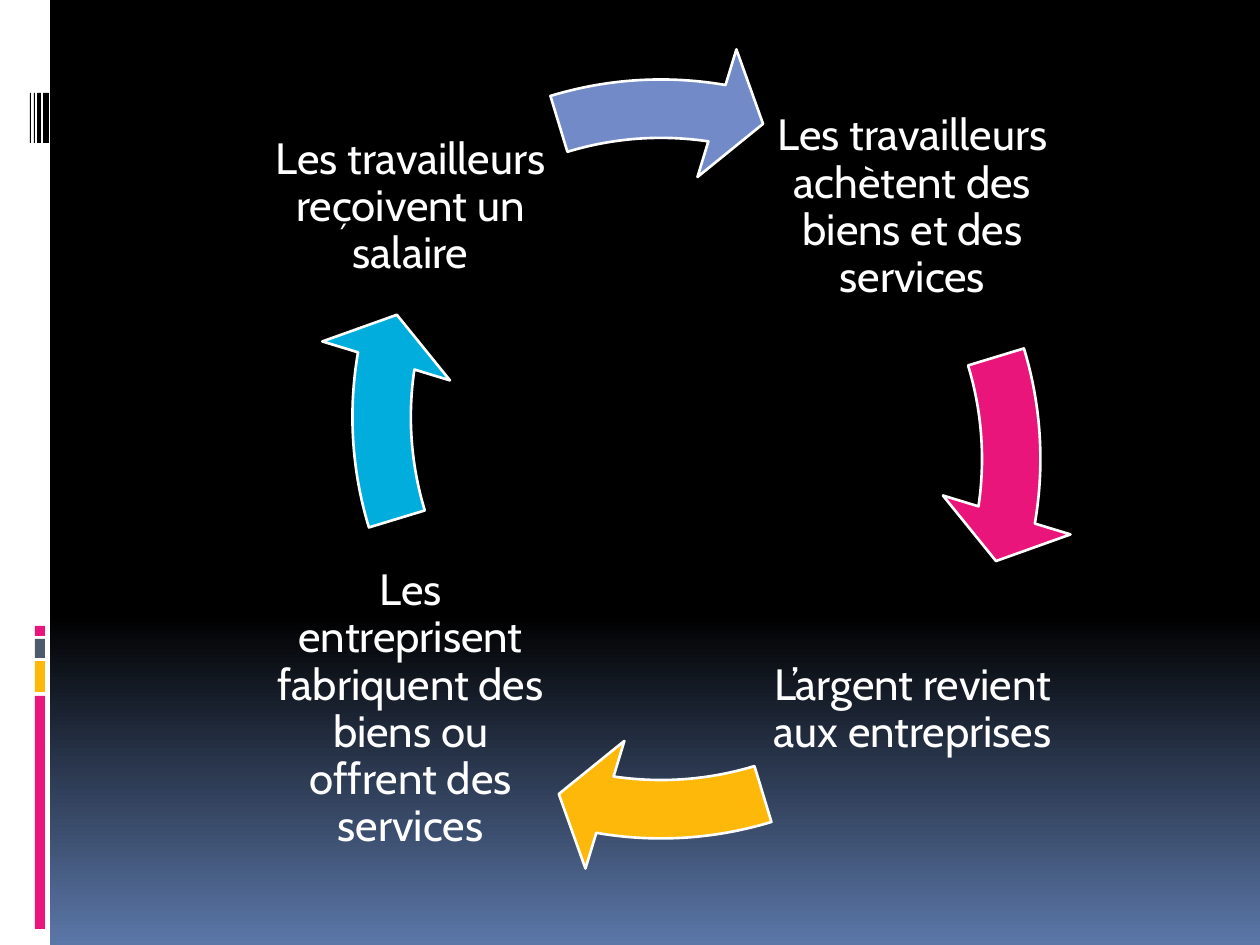
from dataclasses import dataclass

from pptx import Presentation
from pptx.dml.color import RGBColor
from pptx.enum.shapes import MSO_SHAPE
from pptx.enum.text import MSO_ANCHOR, PP_ALIGN
from pptx.util import Emu, Pt


@dataclass(frozen=True)
class Theme:
    """Colours and type sizes of the slide."""
    black: str = "000000"
    white: str = "FFFFFF"
    glow: str = "5B77A8"
    pink: str = "EA157A"
    amber: str = "FEB80A"
    slate: str = "4E5B6F"
    cyan: str = "00ADDC"
    violet: str = "738AC8"
    font: str = "Cabin"
    text_size: float = 25
    outline: float = 1.5


THEME = Theme()
SCALE = 914400 / 126
QUARTER_TURN = 54
FULL_TURN = 216
TEXT_SIDE = 295
ARROW_SIDE = 834

BARS = [
    (0, 0, 50, 945, THEME.white),
    (35, 696, 10, 233, THEME.pink),
    (35, 661, 10, 31, THEME.amber),
    (35, 639, 10, 19, THEME.slate),
    (35, 626, 10, 10, THEME.pink),
]
BARCODE = [(43, 6), (37, 4), (34, 1), (30, 1)]
STAGES = [
    ("Les travailleurs achètent des biens et des services",
     (765, 60), (244, 42), THEME.pink),
    ("L’argent revient aux entreprises",
     (765, 562), (244, 42), THEME.amber),
    ("Les entreprisent fabriquent des biens ou offrent des services",
     (263, 562), (315, 0), THEME.cyan),
    ("Les travailleurs reçoivent un salaire",
     (263, 60), (244, 42), THEME.violet),
]


def px(n):
    """Turn pixels into EMU."""
    return Emu(round(n * SCALE))


def rgb(value):
    """Turn a hex string into a colour."""
    return RGBColor.from_string(value)


def apply(obj, formats):
    """Set each attribute in formats on obj."""
    for name, value in formats.items():
        setattr(obj, name, value)


def set_background(s):
    """Fill the slide with black that fades to blue at the foot."""
    fill = s.background.fill
    fill.gradient()
    fill.gradient_angle = 270
    stops = [(0.65, THEME.black), (1.0, THEME.glow)]
    for stop, (position, color) in zip(fill.gradient_stops, stops):
        stop.position = position
        stop.color.rgb = rgb(color)


def add_filled(shapes, kind, x, y, w, h, color):
    """Add a plain filled shape without line or shadow."""
    sp = shapes.add_shape(kind, px(x), px(y), px(w), px(h))
    sp.shadow.inherit = False
    sp.fill.solid()
    sp.fill.fore_color.rgb = rgb(color)
    sp.line.fill.background()
    return sp


def add_sidebar(shapes):
    """Add the white edge with its colour blocks and barcode."""
    for bar in BARS:
        add_filled(shapes, MSO_SHAPE.RECTANGLE, *bar)
    for x, w in BARCODE:
        add_filled(shapes, MSO_SHAPE.RECTANGLE, x, 93, w, 50, THEME.black)


def add_label(shapes, text, x, y):
    """Add the centred text of one stage."""
    sp = shapes.add_textbox(px(x), px(y), px(TEXT_SIDE), px(TEXT_SIDE))
    tf = sp.text_frame
    inset = px(4)
    apply(tf, {"word_wrap": True, "vertical_anchor": MSO_ANCHOR.MIDDLE,
               "margin_left": inset, "margin_right": inset,
               "margin_top": inset, "margin_bottom": inset})
    p = tf.paragraphs[0]
    apply(p, {"alignment": PP_ALIGN.CENTER, "line_spacing": 0.9,
              "space_after": Pt(THEME.text_size * 0.35)})
    r = p.add_run()
    r.text = text
    apply(r.font, {"name": THEME.font, "size": Pt(THEME.text_size)})
    r.font.color.rgb = rgb(THEME.white)


def add_arrow(shapes, turn, x, y, color):
    """Add a circular arrow advanced by a number of quarter turns."""
    sp = add_filled(shapes, MSO_SHAPE.CIRCULAR_ARROW,
                    x, y, ARROW_SIDE, ARROW_SIDE, color)
    sp.line.color.rgb = rgb(THEME.white)
    sp.line.width = Pt(THEME.outline)
    shift = turn * QUARTER_TURN
    angles = [0.07, 4.65, 5.52 + shift, (205.84 + shift) % FULL_TURN, 0.08]
    for i, value in enumerate(angles):
        sp.adjustments[i] = value


def add_cycle(shapes):
    """Add the grouped cycle of stages and arrows."""
    group = shapes.add_group_shape().shapes
    for turn, (text, text_at, arrow_at, color) in enumerate(STAGES):
        add_label(group, text, *text_at)
        add_arrow(group, turn, *arrow_at, color)


def main():
    """Build and save the slide."""
    prs = Presentation()
    apply(prs, {"slide_width": px(1260), "slide_height": px(945)})
    s = prs.slides.add_slide(prs.slide_layouts[6])
    set_background(s)
    add_sidebar(s.shapes)
    add_cycle(s.shapes)
    prs.save("out.pptx")


if __name__ == "__main__":
    main()
